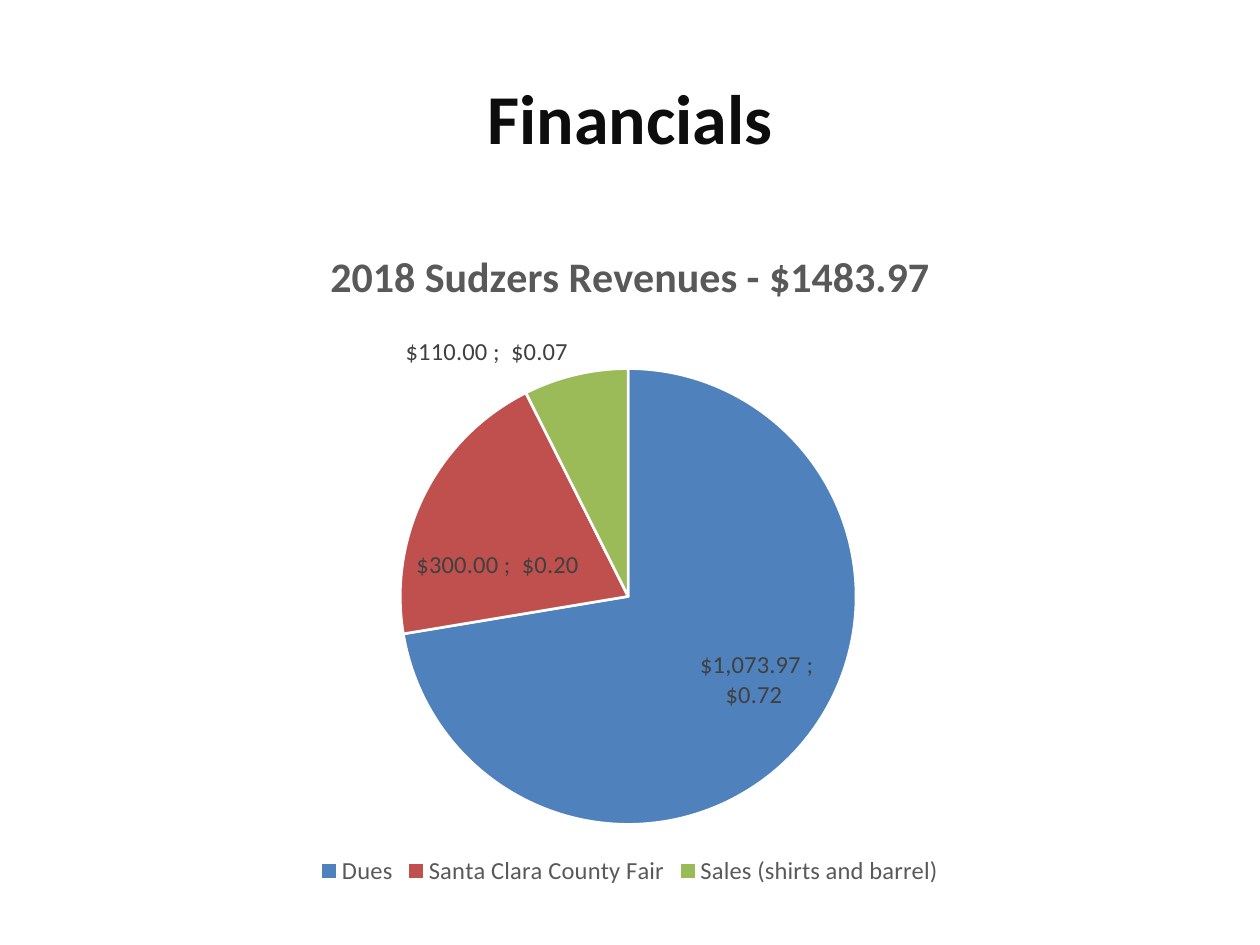
import lxml.etree
import pptx
import pptx.chart.data
import pptx.dml.color
import pptx.enum.chart
import pptx.enum.text
import pptx.oxml.ns
import pptx.util

COLORS = {
    "title": "0D0D0D", "heading": "595959", "label": "404040", "edge": "FFFFFF",
    "Dues": "4F81BD", "Santa Clara County Fair": "C0504D", "Sales (shirts and barrel)": "9BBB59",
}
REVENUES = {"Dues": 1073.97, "Santa Clara County Fair": 300, "Sales (shirts and barrel)": 110}
ACCOUNTING = r'_("$"* #,##0.00_);_("$"* \(#,##0.00\);_("$"* "-"??_);_(@_)'
FONT = "Calibri"


def rgb(name):
    """Return the named colour."""
    return pptx.dml.color.RGBColor.from_string(COLORS[name])


def style_font(font, size, color, bold=False):
    """Apply the typeface, size, colour and weight."""
    font.name, font.size, font.bold = FONT, pptx.util.Pt(size), bold
    font.color.rgb = rgb(color)


def outline_text(span, width, color):
    """Give the letters of a run a solid outline."""
    qn = pptx.oxml.ns.qn
    line = lxml.etree.Element(qn("a:ln"), w=str(pptx.util.Pt(width)))
    fill = lxml.etree.SubElement(line, qn("a:solidFill"))
    lxml.etree.SubElement(fill, qn("a:srgbClr"), val=COLORS[color])
    span.font._element.insert(0, line)


def place_title(page, box, text):
    """Format the title placeholder inside its box."""
    title = page.shapes.title
    title.left, title.top, title.width, title.height = box
    title.text_frame.vertical_anchor = pptx.enum.text.MSO_ANCHOR.MIDDLE
    para = title.text_frame.paragraphs[0]
    para.alignment = pptx.enum.text.PP_ALIGN.CENTER
    span = para.add_run()
    span.text = text
    style_font(span.font, 40, "title", True)
    outline_text(span, 1.5, "title")


def place_revenue_pie(page, box, heading):
    """Add the revenue pie with its heading, labels and legend."""
    data = pptx.chart.data.CategoryChartData(number_format=ACCOUNTING)
    data.categories = list(REVENUES)
    data.add_series("Series 1", list(REVENUES.values()))
    chart = page.shapes.add_chart(pptx.enum.chart.XL_CHART_TYPE.PIE, *box, data).chart
    chart.font.name, chart.font.size = FONT, pptx.util.Pt(10)

    chart.has_title = True
    span = chart.chart_title.text_frame.paragraphs[0].add_run()
    span.text = heading
    style_font(span.font, 24, "heading", True)
    chart.chart_title.include_in_layout = False

    chart.has_legend = True
    chart.legend.position = pptx.enum.chart.XL_LEGEND_POSITION.BOTTOM
    chart.legend.include_in_layout = False
    style_font(chart.legend.font, 14, "heading")

    plot = chart.plots[0]
    plot.vary_by_categories = True
    for index, source in enumerate(REVENUES):
        slice_format = plot.series[0].points[index].format
        slice_format.fill.solid()
        slice_format.fill.fore_color.rgb = rgb(source)
        slice_format.line.color.rgb = rgb("edge")
        slice_format.line.width = pptx.util.Pt(1.5)

    labels = plot.series[0].data_labels
    labels.show_value = labels.show_percentage = True
    labels.number_format, labels.number_format_is_linked = ACCOUNTING, False
    labels.position = pptx.enum.chart.XL_LABEL_POSITION.BEST_FIT
    style_font(labels.font, 14, "label")


def main():
    """Build and save the financials slide."""
    deck = pptx.Presentation()
    deck.slide_width, deck.slide_height = pptx.util.Inches(10), pptx.util.Inches(7.5)
    page = deck.slides.add_slide(deck.slide_layouts[5])
    width, height = deck.slide_width, deck.slide_height
    left, span = int(width * 0.05), int(width * 0.9)
    place_title(page, (left, int(height * 0.04), span, int(height / 6)), "Financials")
    place_revenue_pie(page, (left, int(height * 0.233), span, int(height * 0.71)),
                      "2018 Sudzers Revenues - $1483.97")
    deck.save("out.pptx")


if __name__ == "__main__":
    main()
